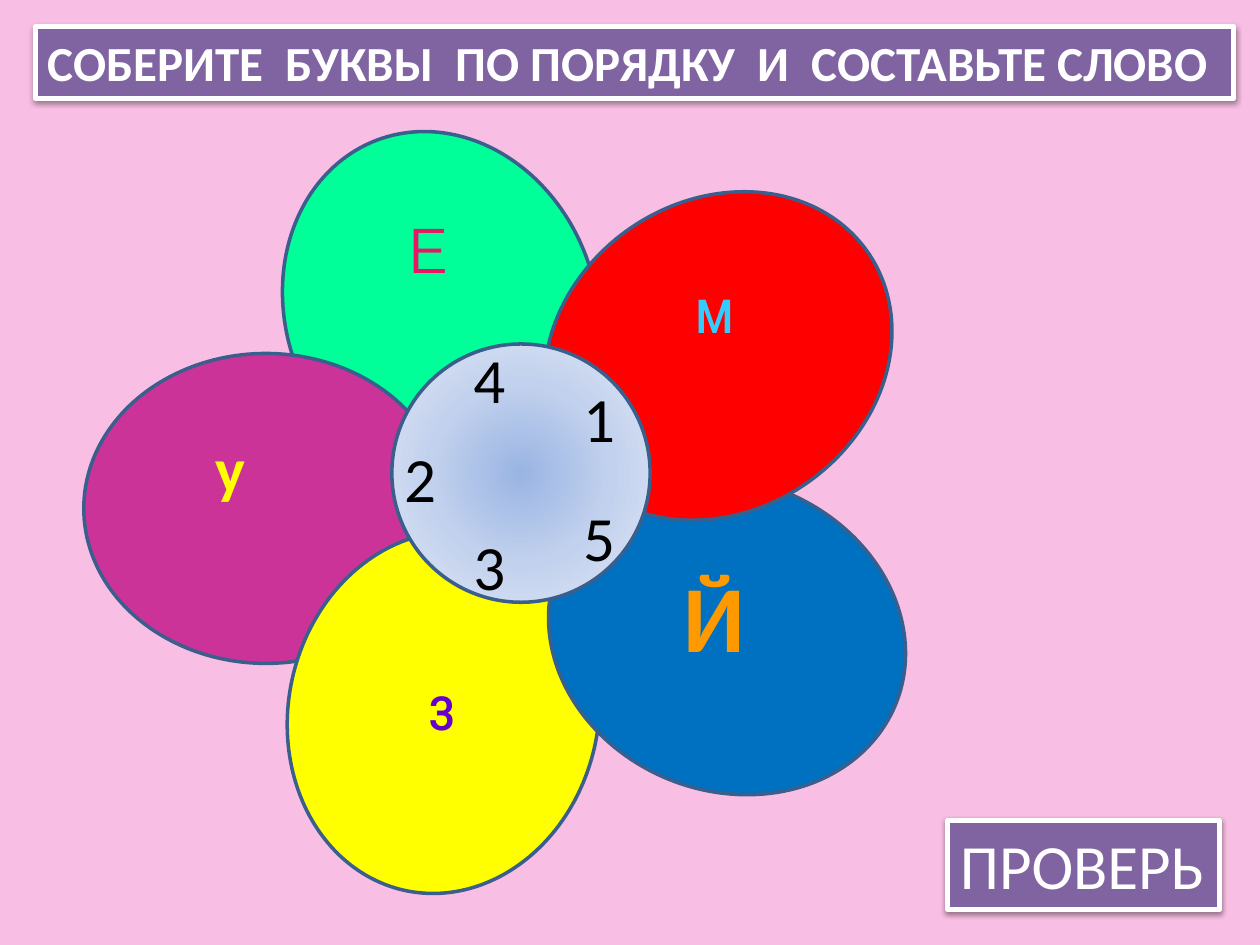
from lxml import etree
from pptx import Presentation
from pptx.dml.color import RGBColor
from pptx.enum.shapes import MSO_SHAPE
from pptx.enum.text import MSO_ANCHOR, MSO_AUTO_SIZE, PP_ALIGN
from pptx.oxml.ns import nsdecls
from pptx.util import Inches, Pt

PINK = RGBColor(0xF8, 0xBE, 0xE3)
EDGE = RGBColor(0x3A, 0x5F, 0x8C)
GREEN = RGBColor(0x00, 0xFF, 0x99)
MAGENTA = RGBColor(0xCC, 0x33, 0x99)
YELLOW = RGBColor(0xFF, 0xFF, 0x00)
BLUE = RGBColor(0x00, 0x70, 0xC0)
RED = RGBColor(0xFF, 0x00, 0x00)
PURPLE = RGBColor(0x80, 0x64, 0xA2)
WHITE = RGBColor(0xFF, 0xFF, 0xFF)
BLACK = RGBColor(0x00, 0x00, 0x00)
SKY = RGBColor(0x33, 0xCC, 0xFF)
NAVY = RGBColor(0x00, 0x00, 0x99)
ORANGE = RGBColor(0xFF, 0x99, 0x00)
LILAC = RGBColor(0xCC, 0x99, 0xFF)
PALE = RGBColor(0xEA, 0xEA, 0xEA)
VIOLETS = [(0, RGBColor(0x66, 0x00, 0xCC)), (100, RGBColor(0xCC, 0x00, 0xCC))]
RAINBOW = [(0, RGBColor(0xA6, 0x03, 0xAB)), (12, RGBColor(0xE8, 0x17, 0x66)),
           (27, RGBColor(0xEE, 0x3F, 0x17)), (48, YELLOW),
           (65, RGBColor(0x1A, 0x8D, 0x48)), (79, RGBColor(0x08, 0x19, 0xFB)),
           (100, RGBColor(0xA6, 0x03, 0xAB))]
GLOW = [(0, RGBColor(0x9A, 0xB5, 0xE4)), (50, RGBColor(0xC2, 0xD1, 0xED)),
        (100, RGBColor(0xE1, 0xE8, 0xF5))]
LINEAR = '<a:lin ang="{}" scaled="0"/>'
RADIAL = ('<a:path path="circle"><a:fillToRect l="50000" t="50000" '
          'r="50000" b="50000"/></a:path>')


def make_element(tag, content, attributes=""):
    return etree.fromstring(f"<a:{tag} {nsdecls('a')} {attributes}>{content}</a:{tag}>")


def make_gradient(stops, direction):
    marks = "".join(f'<a:gs pos="{place * 1000}"><a:srgbClr val="{color}"/></a:gs>'
                    for place, color in stops)
    return make_element("gradFill", f"<a:gsLst>{marks}</a:gsLst>{direction}")


def write(shape, text, size=36, font="Calibri", color=BLACK, bold=False,
          align=PP_ALIGN.LEFT, gradient=None, angle=0, outline=None,
          outline_width=1, spacing=None):
    frame = shape.text_frame
    frame.word_wrap = False
    frame.auto_size = MSO_AUTO_SIZE.NONE
    frame.vertical_anchor = MSO_ANCHOR.TOP
    para = frame.paragraphs[0]
    para.alignment = align
    span = para.add_run()
    span.text = text
    span.font.name, span.font.size, span.font.bold = font, Pt(size), bold
    properties = span.font._element
    if gradient:
        properties.insert(0, make_gradient(gradient, LINEAR.format(angle * 60000)))
    else:
        span.font.color.rgb = color
    if outline is not None:
        fill = f'<a:solidFill><a:srgbClr val="{outline}"/></a:solidFill>'
        properties.insert(0, make_element("ln", fill, f'w="{Pt(outline_width)}"'))
    if spacing is not None:
        properties.set("spc", str(round(spacing * 100)))


def add_text(page, box, text, **style):
    write(page.shapes.add_textbox(*map(Inches, box)), text, **style)


def add_filled(page, kind, box, fill, line, width):
    shape = page.shapes.add_shape(kind, *map(Inches, box))
    shape.shadow.inherit = False
    shape.fill.solid()
    shape.fill.fore_color.rgb = fill
    shape.line.color.rgb = line
    shape.line.width = Pt(width)
    return shape


def add_petals(page, petals):
    for left, top, turn, color in petals:
        petal = add_filled(page, MSO_SHAPE.OVAL, (left, top, 2.46, 2.89), color, EDGE, 2)
        petal.rotation = turn


def add_center(page, box, numbers):
    center = add_filled(page, MSO_SHAPE.OVAL, box, WHITE, EDGE, 2)
    solid = center._element.spPr.find("{*}solidFill")
    center._element.spPr.replace(solid, make_gradient(GLOW, RADIAL))
    left, top = box[:2]
    for number, across, down in numbers:
        add_text(page, (left + across, top + down, 0.46, 0.71), number)


def add_plate(page, box, text, **style):
    plate = add_filled(page, MSO_SHAPE.RECTANGLE, box, PURPLE, WHITE, 3)
    shadow = (f'<a:outerShdw blurRad="{Pt(3.1)}" dist="{Pt(1.6)}" dir="5400000" '
              'rotWithShape="0"><a:srgbClr val="000000"><a:alpha val="38000"/>'
              '</a:srgbClr></a:outerShdw>')
    properties = plate._element.spPr
    properties.replace(properties.find("{*}effectLst"), make_element("effectLst", shadow))
    write(plate, text, color=WHITE, **style)


def add_letters(page):
    middle = PP_ALIGN.CENTER
    add_text(page, (1.61, 3.36, 0.9, 1.1), "у", color=YELLOW, bold=True,
             outline=YELLOW, outline_width=2.48)
    add_text(page, (5.16, 2.1, 1.02, 1.18), "м", font="Roboto Condensed", color=SKY,
             align=middle, outline=NAVY, spacing=-3.6)
    add_text(page, (3.03, 5.25, 0.95, 1.07), "з", font="Roboto Condensed", align=middle,
             gradient=VIOLETS, angle=90, outline=LILAC, outline_width=0.75)
    add_text(page, (2.95, 1.62, 0.88, 0.97), "Е", font="Montserrat", align=middle,
             gradient=RAINBOW, outline=PALE)
    add_text(page, (5.16, 4.38, 1.02, 1.1), "Й", size=54, color=ORANGE, bold=True,
             align=middle, outline=ORANGE, outline_width=0.9, spacing=0.5)


def main():
    deck = Presentation()
    deck.slide_width, deck.slide_height = Inches(10), Inches(7.5)
    page = deck.slides.add_slide(deck.slide_layouts[6])
    page.background.fill.solid()
    page.background.fill.fore_color.rgb = PINK
    add_petals(page, [(2.27, 1.02, 339.7, GREEN), (0.88, 2.59, 270, MAGENTA),
                      (2.29, 4.21, 12.2, YELLOW), (4.54, 3.6, 112, BLUE),
                      (4.47, 1.38, 55.4, RED)])
    add_center(page, (3.11, 2.73, 2.05, 2.05),
               [("1", 1.42, 0.23), ("2", 0, 0.71), ("3", 0.55, 1.41),
                ("4", 0.55, -0.08), ("5", 1.42, 1.18)])
    add_plate(page, (7.52, 6.51, 2.16, 0.71), "ПРОВЕРЬ")
    add_plate(page, (0.28, 0.21, 9.51, 0.57),
              "СОБЕРИТЕ  БУКВЫ  ПО ПОРЯДКУ  И  СОСТАВЬТЕ СЛОВО", size=28, bold=True)
    add_letters(page)
    deck.save("out.pptx")


if __name__ == "__main__":
    main()
